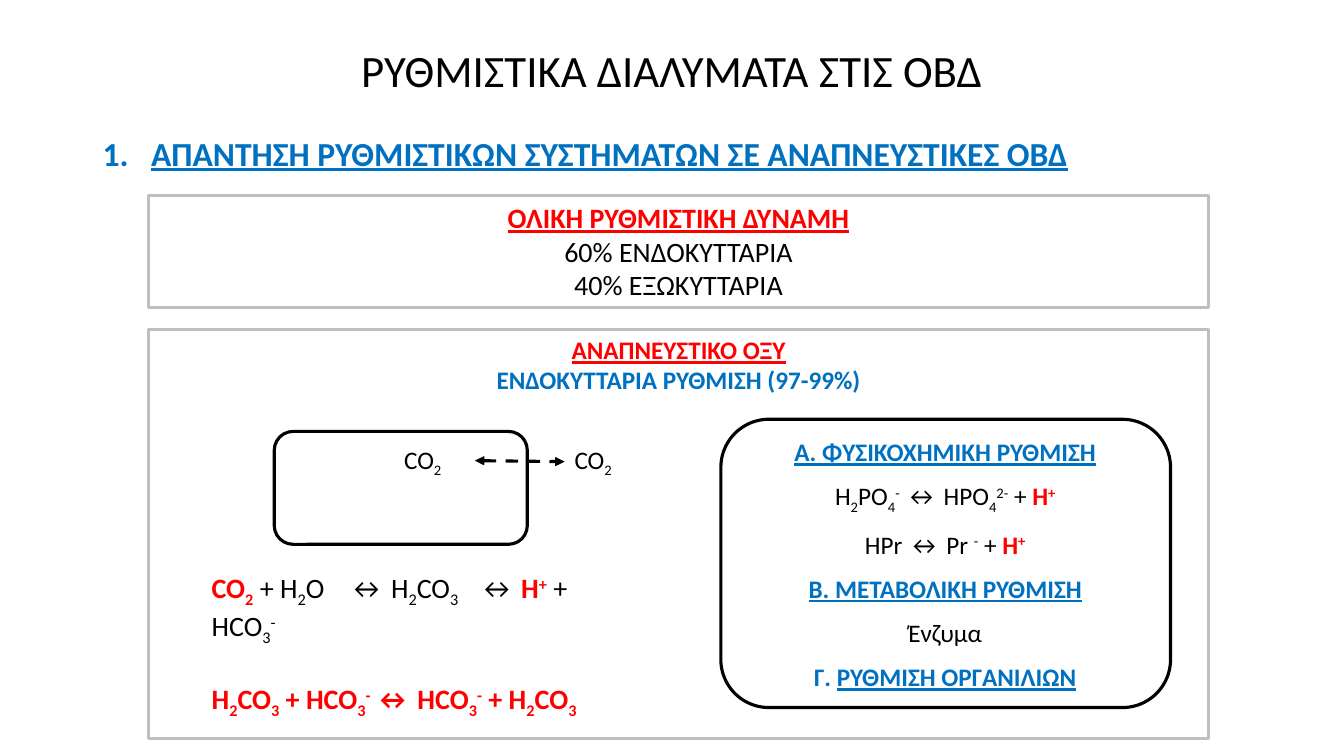
from lxml.etree import SubElement
from pptx import Presentation
from pptx.dml.color import RGBColor
from pptx.enum.dml import MSO_LINE
from pptx.enum.shapes import MSO_CONNECTOR, MSO_SHAPE
from pptx.enum.text import MSO_ANCHOR, PP_ALIGN
from pptx.oxml.ns import qn
from pptx.util import Pt

PX = 9144
COLOURS = {"black": "000000", "red": "FF0000", "blue": "0070C0", "grey": "BFBFBF"}
BASELINES = {"_": "-25000", "^": "30000"}
LOOKS = {
    "plain": ("black", False, False),
    "acid": ("red", True, False),
    "alert": ("red", True, True),
    "label": ("blue", True, False),
    "heading": ("blue", True, True),
}

deck = Presentation()
deck.slide_width, deck.slide_height = 1333 * PX, 750 * PX
page = deck.slides.add_slide(deck.slide_layouts[5])


def write(box, size, align, lines, gap=0, spacing=1.0):
    frame = box.text_frame
    frame.word_wrap = True
    frame.vertical_anchor = MSO_ANCHOR.TOP
    for index, line in enumerate(lines):
        para = frame.add_paragraph() if index else frame.paragraphs[0]
        para.alignment = align
        para.line_spacing = spacing
        para.space_before = Pt(gap if index else 0)
        for text, look in line:
            colour, bold, underline = LOOKS[look]
            for piece in text.split("|"):
                span = para.add_run()
                span.text = piece.lstrip("_^")
                span.font.name = "Calibri"
                span.font.size = Pt(size)
                span.font.bold = bold
                span.font.underline = underline
                span.font.color.rgb = RGBColor.from_string(COLOURS[colour])
                if piece[0] in BASELINES:
                    span.font._element.set("baseline", BASELINES[piece[0]])
    return frame


def outline(kind, colour, left, top, width, height):
    shape = page.shapes.add_shape(kind, left * PX, top * PX, width * PX, height * PX)
    shape.shadow.inherit = False
    shape.fill.background()
    shape.line.color.rgb = RGBColor.from_string(COLOURS[colour])
    shape.line.width = Pt(2.25)
    return shape


title = page.shapes.title
title.left, title.top, title.width, title.height = 0, 0, 1333 * PX, 145 * PX
write(title, 32, PP_ALIGN.CENTER, [[("ΡΥΘΜΙΣΤΙΚΑ ΔΙΑΛΥΜΑΤΑ ΣΤΙΣ ΟΒΔ", "plain")]], spacing=0.9)
title.text_frame.vertical_anchor = MSO_ANCHOR.MIDDLE

capacity = outline(MSO_SHAPE.RECTANGLE, "grey", 147, 194, 1052, 111)
write(capacity, 20, PP_ALIGN.CENTER, [
    [("ΟΛΙΚΗ ΡΥΘΜΙΣΤΙΚΗ ΔΥΝΑΜΗ", "alert")],
    [("60% ΕΝΔΟΚΥΤΤΑΡΙΑ", "plain")],
    [("40% ΕΞΩΚΥΤΤΑΡΙΑ", "plain")],
])

respiratory = outline(MSO_SHAPE.RECTANGLE, "grey", 147, 327, 1052, 406)
write(respiratory, 18, PP_ALIGN.CENTER, [
    [("ΑΝΑΠΝΕΥΣΤΙΚΟ ΟΞΥ", "alert")],
    [("ΕΝΔΟΚΥΤΤΑΡΙΑ ΡΥΘΜΙΣΗ (97-99%)", "label")],
])

outline(MSO_SHAPE.ROUNDED_RECTANGLE, "black", 272, 428, 251, 112)
for left in (391, 560):
    gas = page.shapes.add_textbox(left * PX, 436 * PX, 90 * PX, 41 * PX)
    write(gas, 18, PP_ALIGN.LEFT, [[("CO|_2", "plain")]])

exchange = page.shapes.add_connector(
    MSO_CONNECTOR.STRAIGHT, 471 * PX, 457 * PX, 560 * PX, 458 * PX)
exchange.line.color.rgb = RGBColor.from_string(COLOURS["black"])
exchange.line.width = Pt(2.25)
exchange.line.dash_style = MSO_LINE.DASH
for end in ("a:headEnd", "a:tailEnd"):
    SubElement(exchange.line._get_or_add_ln(), qn(end), type="triangle")
SubElement(exchange._element.spPr, qn("a:effectLst"))

equations = page.shapes.add_textbox(200 * PX, 561 * PX, 395 * PX, 145 * PX)
frame = write(equations, 20, PP_ALIGN.LEFT, [
    [("CO|_2", "acid"), (" + H|_2|O\t↔\tH|_2|CO|_3|\t↔\t", "plain"),
     ("H|^+", "acid"), (" + HCO|_3|^-", "plain")],
    [("H|_2|CO|_3| + HCO|_3|^- |↔ HCO|_3|^-| + H|_2|CO|_3", "acid")],
], gap=25)
stops = SubElement(frame.paragraphs[0]._p.get_or_add_pPr(), qn("a:tabLst"))
for stop in (136, 178, 265, 307):
    SubElement(stops, qn("a:tab"), pos=str(stop * PX), algn="l")

section = page.shapes.add_textbox(92 * PX, 131 * PX, 1150 * PX, 50 * PX)
frame = write(section, 24, PP_ALIGN.LEFT, [
    [("ΑΠΑΝΤΗΣΗ ΡΥΘΜΙΣΤΙΚΩΝ ΣΥΣΤΗΜΑΤΩΝ ΣΕ ΑΝΑΠΝΕΥΣΤΙΚΕΣ ΟΒΔ", "heading")],
], spacing=0.9)
numbering = frame.paragraphs[0]._p.get_or_add_pPr()
numbering.set("marL", str(48 * PX))
numbering.set("indent", str(-48 * PX))
SubElement(numbering, qn("a:buFont"), typeface="Calibri")
SubElement(numbering, qn("a:buAutoNum"), type="arabicPeriod")

outline(MSO_SHAPE.ROUNDED_RECTANGLE, "black", 715, 416, 446, 286)
regulation = page.shapes.add_textbox(714 * PX, 428 * PX, 447 * PX, 275 * PX)
write(regulation, 18, PP_ALIGN.CENTER, [
    [("Α. ΦΥΣΙΚΟΧΗΜΙΚΗ ΡΥΘΜΙΣΗ", "heading")],
    [("H|_2|PO|_4|^-| ↔ HPO|_4|^2-| + ", "plain"), ("H|^+", "acid")],
    [("HPr ↔ Pr |^-| + ", "plain"), ("H|^+", "acid")],
    [("B. ΜΕΤΑΒΟΛΙΚΗ ΡΥΘΜΙΣΗ", "heading")],
    [("Ένζυμα", "plain")],
    [("Γ. ", "label"), ("ΡΥΘΜΙΣΗ ΟΡΓΑΝΙΛΙΩΝ", "heading")],
], gap=10)

deck.save("out.pptx")
